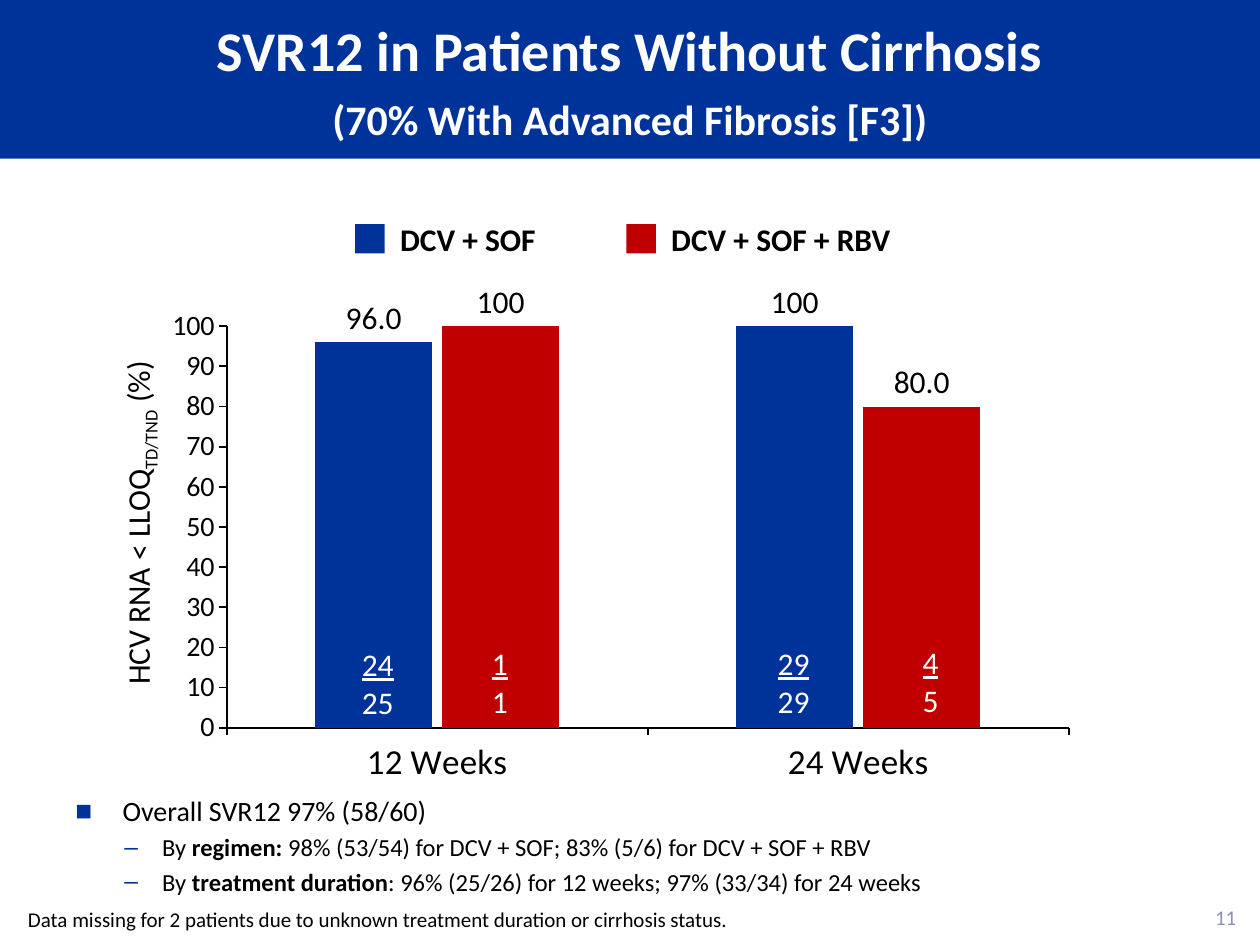
"""Build a slide that charts SVR12 rates in patients without cirrhosis."""
from lxml.etree import SubElement, fromstring
from pptx import Presentation
from pptx.chart.data import CategoryChartData as Data
from pptx.dml.color import RGBColor as RGB
from pptx.enum.chart import XL_CHART_TYPE as Kind, XL_LABEL_POSITION as Spot, XL_TICK_MARK as Tick
from pptx.enum.shapes import MSO_SHAPE as Form
from pptx.enum.text import MSO_ANCHOR as Anchor, PP_ALIGN as Align
from pptx.oxml.ns import nsdecls, qn
from pptx.util import Pt

BLUE = RGB(0x00, 0x33, 0x99)
RED = RGB(0xC0, 0x00, 0x00)
BLACK = RGB(0, 0, 0)
WHITE = RGB(255, 255, 255)
GREY = RGB(0x8C, 0x90, 0xBA)
FACE = "Calibri"


def style(font, size, color=BLACK, bold=False, under=False):
    font.name, font.size, font.bold = FACE, Pt(size), bold
    font.color.rgb = color
    if under:
        font.underline = True


def write(frame, lines, size=18, align=Align.LEFT, anchor=Anchor.TOP, wrap=False, inset=None, **look):
    """Fill a frame with lines, each a list of (text, changes) runs."""
    frame.word_wrap, frame.vertical_anchor = wrap, anchor
    if inset is not None:
        frame.margin_left = frame.margin_right = Pt(inset)
        frame.margin_top = frame.margin_bottom = Pt(inset)
    for i, line in enumerate(lines):
        para = frame.paragraphs[0] if i == 0 else frame.add_paragraph()
        para.alignment = align
        for text, change in line:
            run = para.add_run()
            run.text = text
            style(run.font, **{"size": size, **look, **change})
    return frame.paragraphs


def label(slide, box, lines, **look):
    area = slide.shapes.add_textbox(*map(Pt, box))
    return write(area.text_frame, lines, **look)


def block(slide, box, color):
    shape = slide.shapes.add_shape(Form.RECTANGLE, *map(Pt, box))
    shape.shadow.inherit = False
    shape.fill.solid()
    shape.fill.fore_color.rgb = color
    shape.line.fill.background()
    return shape


def bullet(para, mark, left, hang, gap):
    para.space_before = Pt(gap)
    props = para._p.get_or_add_pPr()
    props.set("marL", str(Pt(left)))
    props.set("indent", str(-Pt(hang)))
    tint = SubElement(SubElement(props, qn("a:buClr")), qn("a:srgbClr"))
    tint.set("val", str(BLUE))
    SubElement(props, qn("a:buFont")).set("typeface", "Arial")
    SubElement(props, qn("a:buChar")).set("char", mark)


def layout(**parts):
    """Return a manual chart layout with the given parts."""
    inner = "".join(f'<c:{key} val="{val}"/>' for key, val in parts.items())
    return fromstring(f'<c:layout {nsdecls("c")}><c:manualLayout>{inner}</c:manualLayout></c:layout>')


def trim(axis, size):
    style(axis.tick_labels.font, size)
    axis.has_major_gridlines = False
    axis.major_tick_mark, axis.minor_tick_mark = Tick.OUTSIDE, Tick.NONE
    axis.format.line.color.rgb = BLACK
    axis.format.line.width = Pt(1)


def name(axis):
    """Give the value axis its upright title with a subscript."""
    title = axis.axis_title
    frame = title.text_frame
    para = frame.paragraphs[0]
    for text, low in (("HCV RNA < LLOQ", False), ("TD/TND", True), (" (%)", False)):
        run = para.add_run()
        run.text = text
        style(run.font, 18)
        if low:
            run.font._element.set("baseline", "-25000")
    body = frame._txBody.bodyPr
    body.set("rot", "-5400000")
    body.set("vert", "horz")
    root = title._element
    for old in root.findall(qn("c:layout")):
        root.remove(old)
    root.find(qn("c:tx")).addnext(layout(xMode="edge", yMode="edge", x=0.05, y=0.13))


def graph(slide):
    data = Data()
    data.categories = ["12 Weeks", "24 Weeks"]
    data.add_series("Series 1", (96, 100))
    data.add_series("Series 2", (100, 80))
    box = map(Pt, (35.3, 160.6, 589, 335.5))
    chart = slide.shapes.add_chart(Kind.COLUMN_CLUSTERED, *box, data).chart
    chart.has_legend = chart.has_title = False
    style(chart.font, 18)
    trim(chart.category_axis, 20)
    axis = chart.value_axis
    trim(axis, 16)
    axis.minimum_scale, axis.maximum_scale, axis.major_unit = 0, 100, 10
    name(axis)
    plot = chart.plots[0]
    plot.gap_width, plot.overlap, plot.vary_by_categories = 150, -8, False
    for series, color in zip(plot.series, (BLUE, RED)):
        series.format.fill.solid()
        series.format.fill.fore_color.rgb = color
        tags = series.data_labels
        tags.show_value, tags.position = True, Spot.OUTSIDE_END
        tags.number_format, tags.number_format_is_linked = "[=100]0;0.0", False
        style(tags.font, 18)
    area = chart._chartSpace.chart.plotArea
    for old in area.findall(qn("c:layout")):
        area.remove(old)
    area.insert(0, layout(layoutTarget="inner", xMode="edge", yMode="edge",
                          x=0.16, y=0.077, w=0.817, h=0.684))


def header(slide):
    band = block(slide, (0, 0, 720, 90.7), BLUE)
    lines = [[("SVR12 in Patients Without Cirrhosis", {})],
             [("(70% With Advanced Fibrosis [F3])", {"size": 24})]]
    paras = write(band.text_frame, lines, size=32, align=Align.CENTER,
                  anchor=Anchor.MIDDLE, wrap=True, color=WHITE, bold=True)
    paras[1].space_before = Pt(6)


def legend(slide):
    for left, wide, text, color in ((203, 93, "DCV + SOF", BLUE), (358, 141, "DCV + SOF + RBV", RED)):
        block(slide, (left, 128, 16.8, 16.8), color)
        label(slide, (left + 18.5, 122.4, wide, 29), [[(text, {})]], bold=True)


def counts(slide):
    for left, top, wide, part, total in ((199.4, 365, 33, "24", "25"), (519.8, 363.8, 24, "4", "5"),
                                         (437, 364.3, 33, "29", "29"), (273.6, 364.3, 24, "1", "1")):
        label(slide, (left, top, wide, 51), [[(part, {"under": True})], [(total, {})]],
              align=Align.CENTER, color=WHITE)


def notes(slide):
    bold = {"bold": True}
    lines = [[("Overall SVR12 97% (58/60)", {"size": 16})],
             [("By ", {}), ("regimen:", bold),
              (" 98% (53/54) for DCV + SOF; 83% (5/6) for DCV + SOF + RBV", {})],
             [("By ", {}), ("treatment duration", bold),
              (": 96% (25/26) for 12 weeks; 97% (33/34) for 24 weeks", {})]]
    first, *rest = label(slide, (36, 450, 660, 70), lines, size=14, wrap=True)
    bullet(first, "■", 27, 27, 3.2)
    for para in rest:
        para.level = 1
        bullet(para, "–", 49.5, 21.5, 2.8)
    missing = "Data missing for 2 patients due to unknown treatment duration or cirrhosis status."
    label(slide, (16, 517.7, 688, 14.6), [[(missing, {})]], size=12,
          anchor=Anchor.BOTTOM, wrap=True, inset=0)


def main():
    deck = Presentation()
    deck.slide_width, deck.slide_height = Pt(720), Pt(540)
    slide = deck.slides.add_slide(deck.slide_layouts[6])
    header(slide)
    label(slide, (687, 513.5, 26.6, 21.6), [[("11", {})]], size=12, color=GREY,
          align=Align.RIGHT, anchor=Anchor.MIDDLE)
    graph(slide)
    legend(slide)
    counts(slide)
    notes(slide)
    deck.save("out.pptx")


if __name__ == "__main__":
    main()
